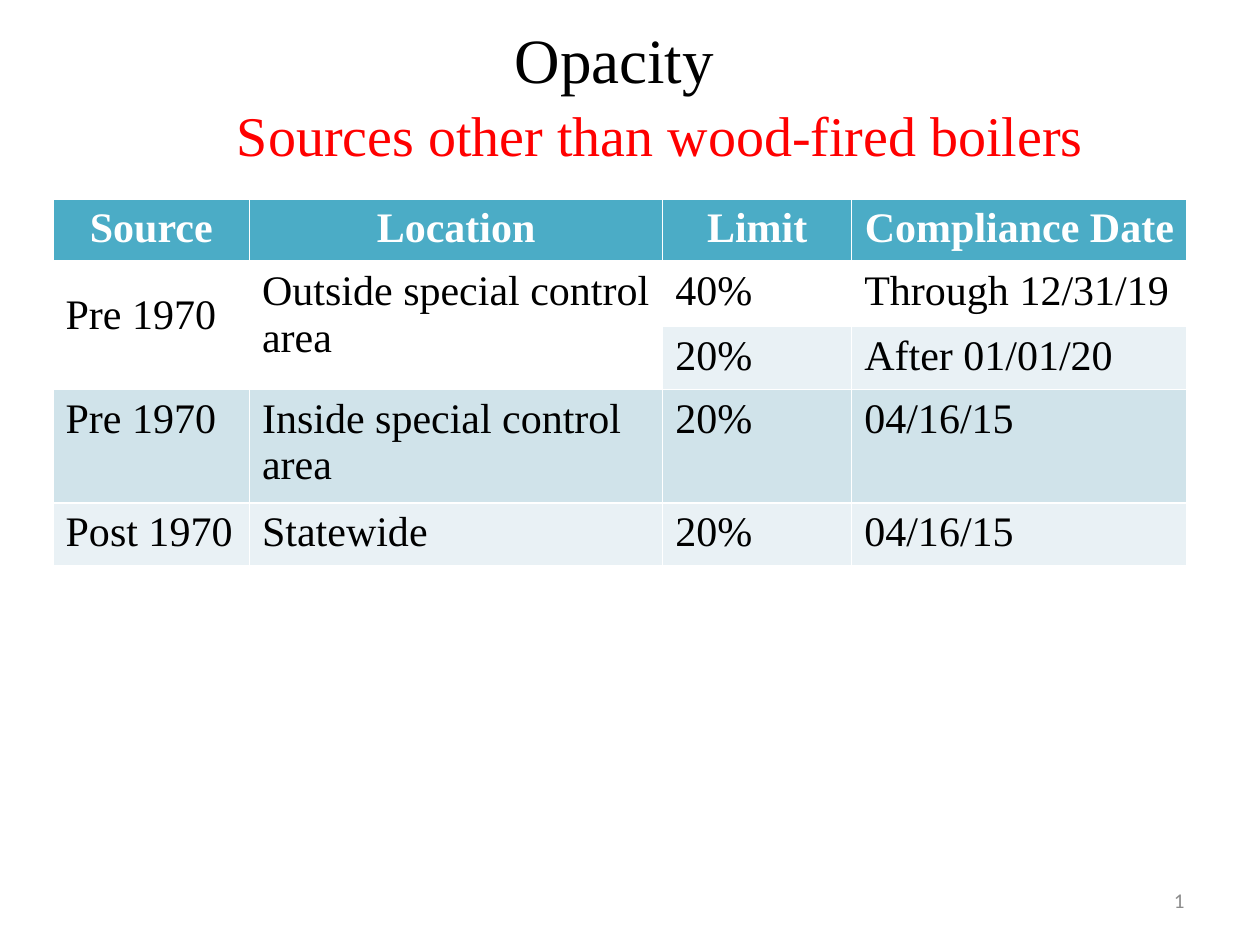
from dataclasses import dataclass

from lxml import etree
from pptx import Presentation
from pptx.dml.color import RGBColor
from pptx.enum import text
from pptx.oxml import ns
from pptx.util import Cm, Pt

COLORS = {
    "black": "000000", "white": "FFFFFF", "red": "FF0000", "grey": "8C8C8C",
    "header": "4BACC6", "band_dark": "D0E3EA", "band_light": "E9F1F5",
}
SERIF = "Times New Roman"
LEFT, CENTER, RIGHT = text.PP_ALIGN.LEFT, text.PP_ALIGN.CENTER, text.PP_ALIGN.RIGHT
TOP, MIDDLE = text.MSO_ANCHOR.TOP, text.MSO_ANCHOR.MIDDLE

COLUMN_WIDTHS = (3.96, 8.33, 3.81, 6.76)


@dataclass
class Label:
    words: str
    left: float
    top: float
    width: float
    height: float
    size: int
    color: str
    align: text.PP_ALIGN = CENTER
    anchor: text.MSO_ANCHOR = MIDDLE
    font: str = SERIF
    wrap: bool = True


@dataclass
class Row:
    cells: tuple[str, ...]
    height: float
    fill: str | None = None


LABELS = (
    Label("Sources other than wood-fired boilers", 4.45, 1.9, 17.73, 1.63,
          32, "red", anchor=TOP, wrap=False),
    Label("Opacity", 1.27, 0, 22.23, 2.34, 36, "black"),
    Label("1", 18.2, 17.65, 5.93, 1.01, 12, "grey", align=RIGHT, font="Calibri"),
)

ROWS = (
    Row(("Source", "Location", "Limit", "Compliance Date"), 1.23, "header"),
    Row(("Pre 1970", "Outside special control area", "40%", "Through 12/31/19"), 1.3),
    Row(("", "", "20%", "After 01/01/20"), 1.27, "band_light"),
    Row(("Pre 1970", "Inside special control area", "20%", "04/16/15"), 2.28, "band_dark"),
    Row(("Post 1970", "Statewide", "20%", "04/16/15"), 1.27, "band_light"),
)


def rgb(name: str) -> RGBColor:
    return RGBColor.from_string(COLORS[name])


def format_text(frame, size: int, color: str, align, font: str = SERIF,
                bold: bool = False) -> None:
    for para in frame.paragraphs:
        para.alignment = align
        for span in para.runs:
            span.font.name = font
            span.font.size = Pt(size)
            span.font.bold = bold
            span.font.color.rgb = rgb(color)


def add_label(page, label: Label) -> None:
    box = page.shapes.add_textbox(Cm(label.left), Cm(label.top),
                                  Cm(label.width), Cm(label.height))
    frame = box.text_frame
    frame.word_wrap = label.wrap
    frame.vertical_anchor = label.anchor
    frame.text = label.words
    format_text(frame, label.size, label.color, label.align, label.font)


def add_borders(cell, bottom: int) -> None:
    """Draw white cell borders, 1 pt wide except for the bottom one."""
    properties = cell._tc.get_or_add_tcPr()
    for side, width in (("L", 1), ("R", 1), ("T", 1), ("B", bottom)):
        line = etree.SubElement(properties, ns.qn(f"a:ln{side}"), w=str(Pt(width)))
        fill = etree.SubElement(line, ns.qn("a:solidFill"))
        etree.SubElement(fill, ns.qn("a:srgbClr"), val=COLORS["white"])


def add_limits_table(page) -> None:
    frame = page.shapes.add_table(
        len(ROWS), len(COLUMN_WIDTHS), Cm(1.07), Cm(4.01),
        Cm(sum(COLUMN_WIDTHS)), Cm(sum(row.height for row in ROWS)))
    table = frame.table
    table.horz_banding = False
    for column, width in zip(table.columns, COLUMN_WIDTHS):
        column.width = Cm(width)

    for row_index, row in enumerate(ROWS):
        table.rows[row_index].height = Cm(row.height)
        is_header = row_index == 0
        for column_index, words in enumerate(row.cells):
            cell = table.cell(row_index, column_index)
            add_borders(cell, bottom=3 if is_header else 1)
            if row.fill:
                cell.fill.solid()
                cell.fill.fore_color.rgb = rgb(row.fill)
            else:
                cell.fill.background()
            cell.text_frame.text = words
            format_text(cell.text_frame, 24, "white" if is_header else "black",
                        CENTER if is_header else LEFT, bold=is_header)

    for column_index in (0, 1):
        table.cell(1, column_index).merge(table.cell(2, column_index))
    table.cell(1, 0).margin_top = Cm(0.6)


def main() -> None:
    deck = Presentation()
    deck.slide_width, deck.slide_height = Cm(25.4), Cm(19.05)
    page = deck.slides.add_slide(deck.slide_layouts[6])
    subtitle, *others = LABELS
    add_label(page, subtitle)
    add_limits_table(page)
    for label in others:
        add_label(page, label)
    deck.save("out.pptx")


if __name__ == "__main__":
    main()
